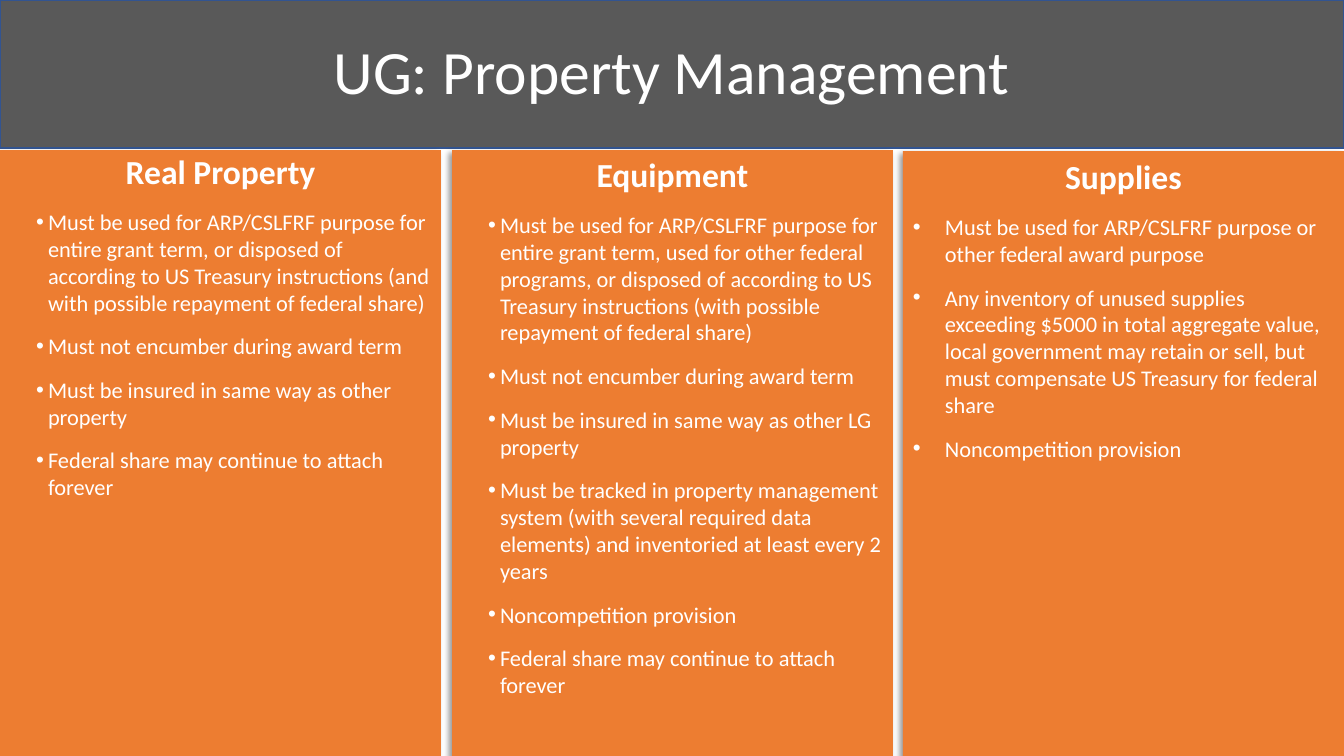
from dataclasses import dataclass

from lxml.etree import SubElement
from pptx import Presentation
from pptx.dml.color import RGBColor
from pptx.enum.shapes import MSO_SHAPE
from pptx.enum.text import MSO_ANCHOR, PP_ALIGN
from pptx.oxml.ns import qn
from pptx.shapes.autoshape import Shape
from pptx.slide import Slide
from pptx.text.text import TextFrame
from pptx.util import Emu, Pt

EMU_PER_PX = 914400 / 100.8
SLIDE_WIDTH, SLIDE_HEIGHT = 1344, 756
COLUMN_WIDTH, COLUMN_HEIGHT = 441, 608
SIDE_INSET = 10


@dataclass(frozen=True)
class Theme:
    font: str = "Calibri"
    text: str = "FFFFFF"
    band: str = "595959"
    band_edge: str = "325491"
    column: str = "ED7D31"
    shadow: str = "000000"
    title_size: int = 44
    heading_size: int = 24
    bullet_size: int = 16
    bullet_gap: int = 12


@dataclass(frozen=True)
class Column:
    heading: str
    bullets: tuple[str, ...]
    top: int
    inset: int
    indent: int
    hanging: int


THEME = Theme()

COLUMNS = (
    Column("Real Property", (
        "Must be used for ARP/CSLFRF purpose for entire grant term, or disposed of "
        "according to US Treasury instructions (and with possible repayment of federal share)",
        "Must not encumber during award term",
        "Must be insured in same way as other property",
        "Federal share may continue to attach forever",
    ), top=150, inset=1, indent=38, hanging=12),
    Column("Equipment", (
        "Must be used for ARP/CSLFRF purpose for entire grant term, used for other federal "
        "programs, or disposed of according to US Treasury instructions "
        "(with possible repayment of federal share)",
        "Must not encumber during award term",
        "Must be insured in same way as other LG property",
        "Must be tracked in property management system (with several required data elements) "
        "and inventoried at least every 2 years",
        "Noncompetition provision",
        "Federal share may continue to attach forever",
    ), top=150, inset=4, indent=38, hanging=12),
    Column("Supplies", (
        "Must be used for ARP/CSLFRF purpose or other federal award purpose",
        "Any inventory of unused supplies exceeding $5000 in total aggregate value, "
        "local government may retain or sell, but must compensate US Treasury for federal share",
        "Noncompetition provision",
    ), top=151, inset=5, indent=32, hanging=32),
)


def px(length: int) -> Emu:
    return Emu(round(length * EMU_PER_PX))


def add_block(slide: Slide, left: int, top: int, width: int, height: int, fill: str) -> Shape:
    block = slide.shapes.add_shape(
        MSO_SHAPE.RECTANGLE, px(left), px(top), px(width), px(height))
    block.shadow.inherit = False
    block.fill.solid()
    block.fill.fore_color.rgb = RGBColor.from_string(fill)
    return block


def set_frame(frame: TextFrame, anchor: MSO_ANCHOR, inset: int) -> None:
    settings = {
        "word_wrap": True,
        "vertical_anchor": anchor,
        "margin_left": px(SIDE_INSET),
        "margin_right": px(SIDE_INSET),
        "margin_top": px(inset),
        "margin_bottom": px(inset),
    }
    for name, value in settings.items():
        setattr(frame, name, value)


def write_line(frame: TextFrame, text: str, size: int, bold: bool = False,
               align: PP_ALIGN = PP_ALIGN.CENTER, gap: int = 0, spacing: float = 1.0,
               indent: int = 0, hanging: int = 0) -> None:
    line = frame.add_paragraph() if frame.text else frame.paragraphs[0]
    layout = {"alignment": align, "line_spacing": spacing, "space_before": Pt(gap)}
    for name, value in layout.items():
        setattr(line, name, value)
    if hanging:
        properties = line._p.get_or_add_pPr()
        properties.set("marL", str(px(indent)))
        properties.set("indent", str(-px(hanging)))
        SubElement(properties, qn("a:buFont"), typeface="Arial")
        SubElement(properties, qn("a:buChar"), char="•")
    words = line.add_run()
    words.text = text
    formats = {"name": THEME.font, "size": Pt(size), "bold": bold}
    for name, value in formats.items():
        setattr(words.font, name, value)
    words.font.color.rgb = RGBColor.from_string(THEME.text)


def add_soft_shadow(block: Shape) -> None:
    effects = block._element.spPr.find(qn("a:effectLst"))
    shadow = SubElement(effects, qn("a:outerShdw"), blurRad=str(Pt(4)), dist=str(Pt(3)),
                        dir="8100000", algn="tr", rotWithShape="0")
    tone = SubElement(shadow, qn("a:srgbClr"), val=THEME.shadow)
    SubElement(tone, qn("a:alpha"), val="40000")


def draw_title(slide: Slide) -> None:
    band = add_block(slide, 0, 0, SLIDE_WIDTH, 148, THEME.band)
    band.line.color.rgb = RGBColor.from_string(THEME.band_edge)
    band.line.width = Pt(1)
    title = slide.shapes.add_textbox(px(92), px(2), px(1160), px(146)).text_frame
    set_frame(title, MSO_ANCHOR.MIDDLE, 5)
    write_line(title, "UG: Property Management", THEME.title_size, spacing=0.9)


def draw_column(slide: Slide, column: Column, left: int) -> None:
    block = add_block(slide, left, column.top, COLUMN_WIDTH, COLUMN_HEIGHT, THEME.column)
    block.line.fill.background()
    add_soft_shadow(block)
    frame = block.text_frame
    set_frame(frame, MSO_ANCHOR.TOP, column.inset)
    write_line(frame, column.heading, THEME.heading_size, bold=True)
    for bullet in column.bullets:
        write_line(frame, bullet, THEME.bullet_size, align=PP_ALIGN.LEFT,
                   gap=THEME.bullet_gap, indent=column.indent, hanging=column.hanging)


def main() -> None:
    deck = Presentation()
    deck.slide_width, deck.slide_height = px(SLIDE_WIDTH), px(SLIDE_HEIGHT)
    slide = deck.slides.add_slide(deck.slide_layouts[6])
    draw_title(slide)
    pitch = (SLIDE_WIDTH - COLUMN_WIDTH) / (len(COLUMNS) - 1)
    for position, column in enumerate(COLUMNS):
        draw_column(slide, column, round(position * pitch))
    deck.save("out.pptx")


if __name__ == "__main__":
    main()
